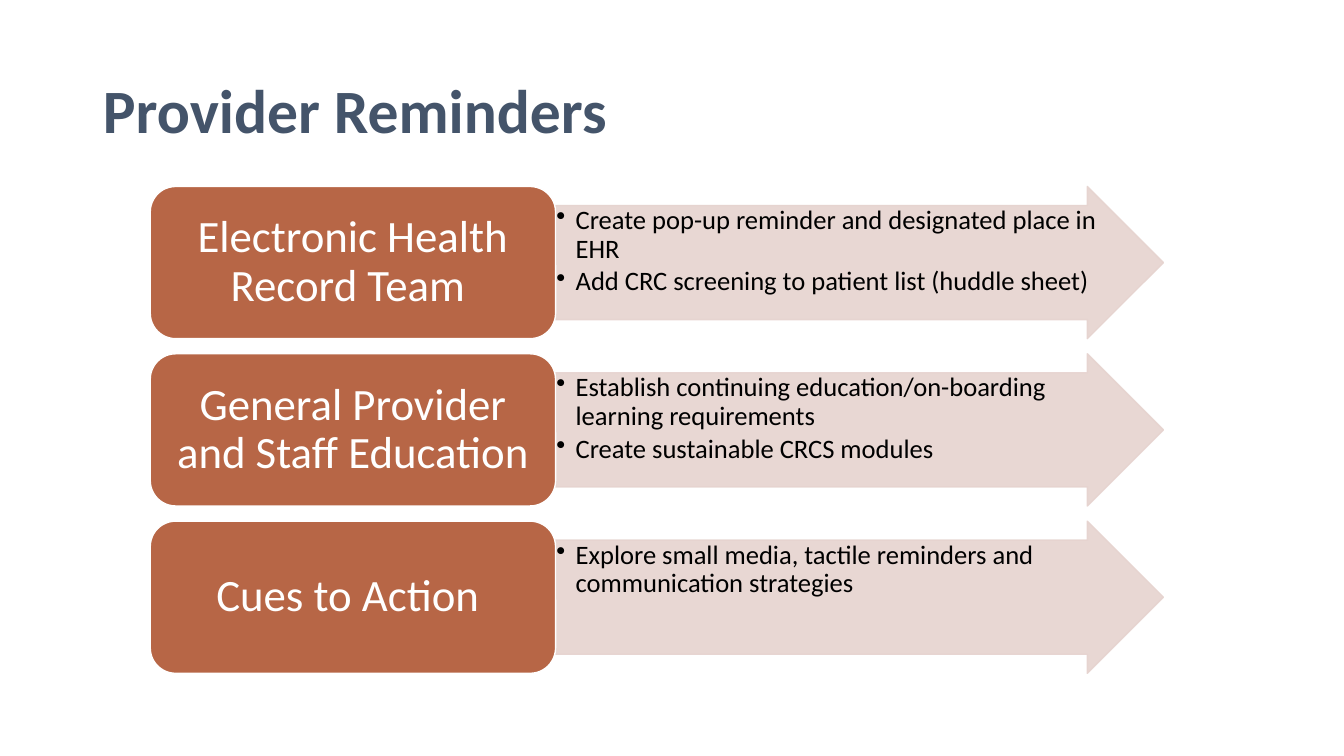
import pptx
import pptx.util
import pptx.dml.color
import pptx.enum.shapes
import pptx.enum.text
import pptx.oxml
import pptx.oxml.ns
import lxml.etree

Inches, Pt = pptx.util.Inches, pptx.util.Pt
SHAPES = pptx.enum.shapes.MSO_SHAPE
ALIGN = pptx.enum.text.PP_ALIGN
ANCHOR = pptx.enum.text.MSO_ANCHOR

TITLE = "Provider Reminders"
STRATEGIES = [
    ("Electronic Health Record Team ",
     ["Create pop-up reminder and designated place in EHR",
      "Add CRC screening to patient list (huddle sheet)"]),
    ("General Provider and Staff Education",
     ["Establish continuing education/on-boarding learning requirements",
      "Create sustainable CRCS modules"]),
    ("Cues to Action ",
     ["Explore small media, tactile reminders and communication strategies"]),
]
COLORS = {"title": "44546A", "card": "B76646", "arrow": "E6D3CF",
          "light": "FFFFFF", "dark": "000000"}
FONT = "Calibri"
CARD_LEFT, CARD_WIDTH, ARROW_WIDTH = 1.49, 4.02, 6.03
ROW_TOP, ROW_HEIGHT, ROW_STEP = 1.85, 1.51, 1.66
ARROW_OPACITY = 90


def rgb(name):
    return pptx.dml.color.RGBColor.from_string(COLORS[name])


def format_text(paragraph, size, color, bold=False):
    paragraph.line_spacing = 0.9
    for run in paragraph.runs:
        run.font.name = FONT
        run.font.size = Pt(size)
        run.font.bold = bold
        run.font.color.rgb = rgb(color)


def add_panel(slide, kind, left, top, width, fill, line):
    shape = slide.shapes.add_shape(kind, Inches(left), Inches(top),
                                   Inches(width), Inches(ROW_HEIGHT))
    shape.shadow.inherit = False
    shape.fill.solid()
    shape.fill.fore_color.rgb = rgb(fill)
    shape.line.color.rgb = rgb(line)
    shape.line.width = Pt(1)
    shape.text_frame.word_wrap = True
    return shape


def set_margins(text_frame, horizontal, vertical):
    text_frame.margin_left = text_frame.margin_right = Inches(horizontal)
    text_frame.margin_top = text_frame.margin_bottom = Inches(vertical)


def set_opacity(shape, percent):
    """Make the fill and the outline of a shape partly transparent."""
    for color in shape._element.spPr.iter(pptx.oxml.ns.qn("a:srgbClr")):
        alpha = lxml.etree.SubElement(color, pptx.oxml.ns.qn("a:alpha"))
        alpha.set("val", str(percent * 1000))


def add_bullet(paragraph):
    properties = paragraph._p.get_or_add_pPr()
    properties.set("marL", str(Inches(0.19)))
    properties.set("indent", str(-Inches(0.19)))
    bullet = lxml.etree.SubElement(properties, pptx.oxml.ns.qn("a:buChar"))
    bullet.set("char", "•")


def add_arrow(slide, top, actions):
    arrow = add_panel(slide, SHAPES.RIGHT_ARROW, CARD_LEFT + CARD_WIDTH, top,
                      ARROW_WIDTH, "arrow", "arrow")
    arrow.adjustments[0], arrow.adjustments[1] = 0.75, 0.5
    set_opacity(arrow, ARROW_OPACITY)
    text_frame = arrow.text_frame
    set_margins(text_frame, 0.01, 0.01)
    text_frame.vertical_anchor = ANCHOR.TOP
    text_frame.text = "\n".join(actions)
    for paragraph in text_frame.paragraphs:
        paragraph.level = 1
        paragraph.alignment = ALIGN.LEFT
        format_text(paragraph, 19, "dark")
        paragraph.space_after = Pt(2.85)
        add_bullet(paragraph)


def add_card(slide, top, heading):
    card = add_panel(slide, SHAPES.ROUNDED_RECTANGLE, CARD_LEFT, top,
                     CARD_WIDTH, "card", "light")
    text_frame = card.text_frame
    set_margins(text_frame, 0.13, 0.07)
    text_frame.vertical_anchor = ANCHOR.MIDDLE
    text_frame.text = heading
    paragraph = text_frame.paragraphs[0]
    paragraph.alignment = ALIGN.CENTER
    format_text(paragraph, 32, "light")


def add_title(slide):
    title = slide.shapes.title
    title.left, title.top = Inches(0.92), Inches(0.4)
    title.width, title.height = Inches(11.5), Inches(1.45)
    text_frame = title.text_frame
    text_frame.text = TITLE
    text_frame.auto_size = pptx.enum.text.MSO_AUTO_SIZE.NONE
    text_frame.vertical_anchor = ANCHOR.MIDDLE
    paragraph = text_frame.paragraphs[0]
    paragraph.alignment = ALIGN.LEFT
    format_text(paragraph, 44, "title", bold=True)


def main():
    presentation = pptx.Presentation()
    presentation.slide_width = Inches(13.33)
    presentation.slide_height = Inches(7.5)
    title_only = presentation.slide_layouts[5]
    slide = presentation.slides.add_slide(title_only)
    add_title(slide)
    for row, (heading, actions) in enumerate(STRATEGIES):
        top = ROW_TOP + row * ROW_STEP
        add_arrow(slide, top, actions)
        add_card(slide, top, heading)
    presentation.save("out.pptx")


if __name__ == "__main__":
    main()
